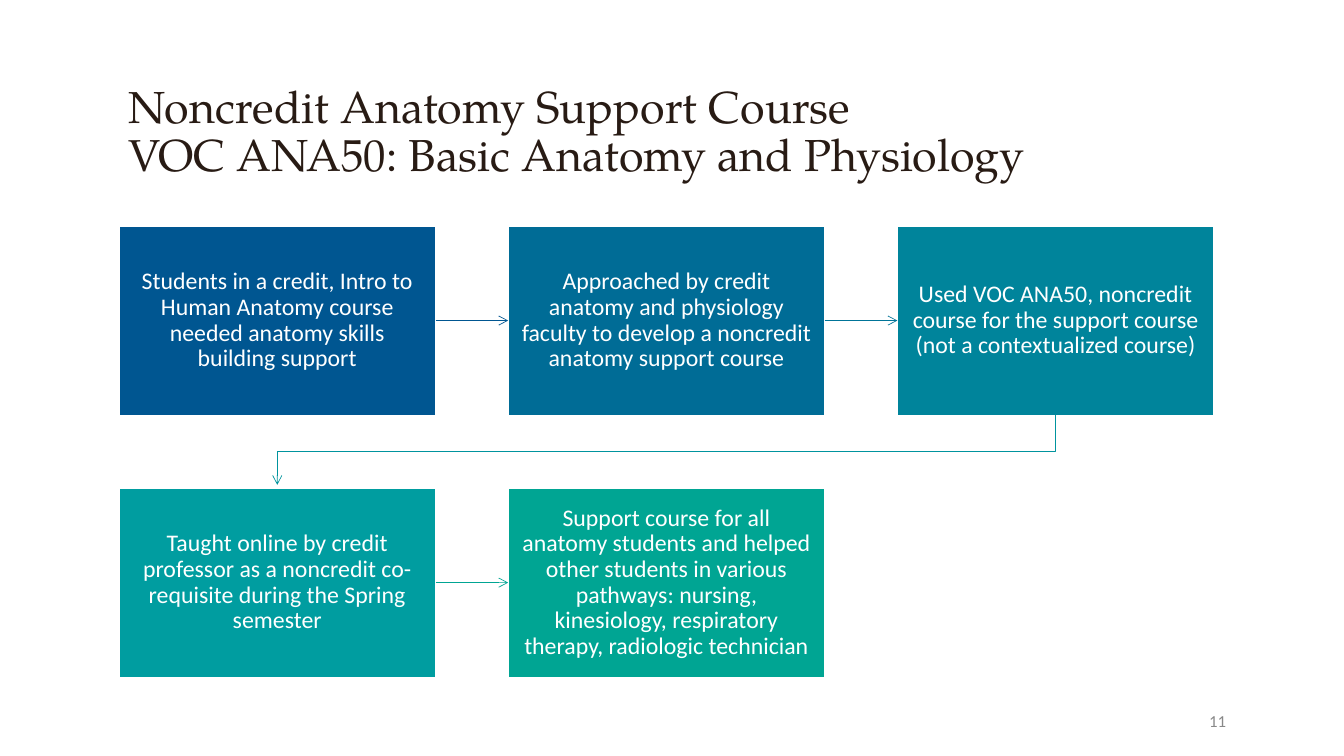
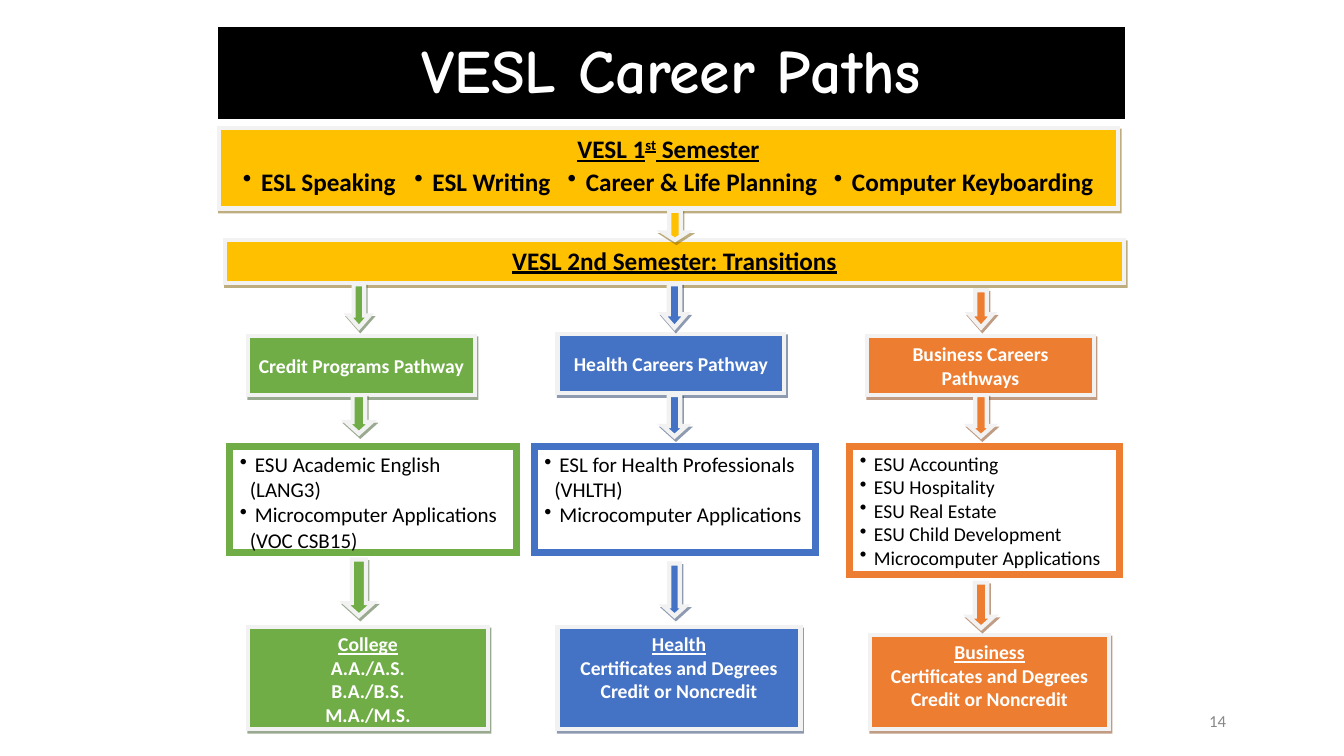
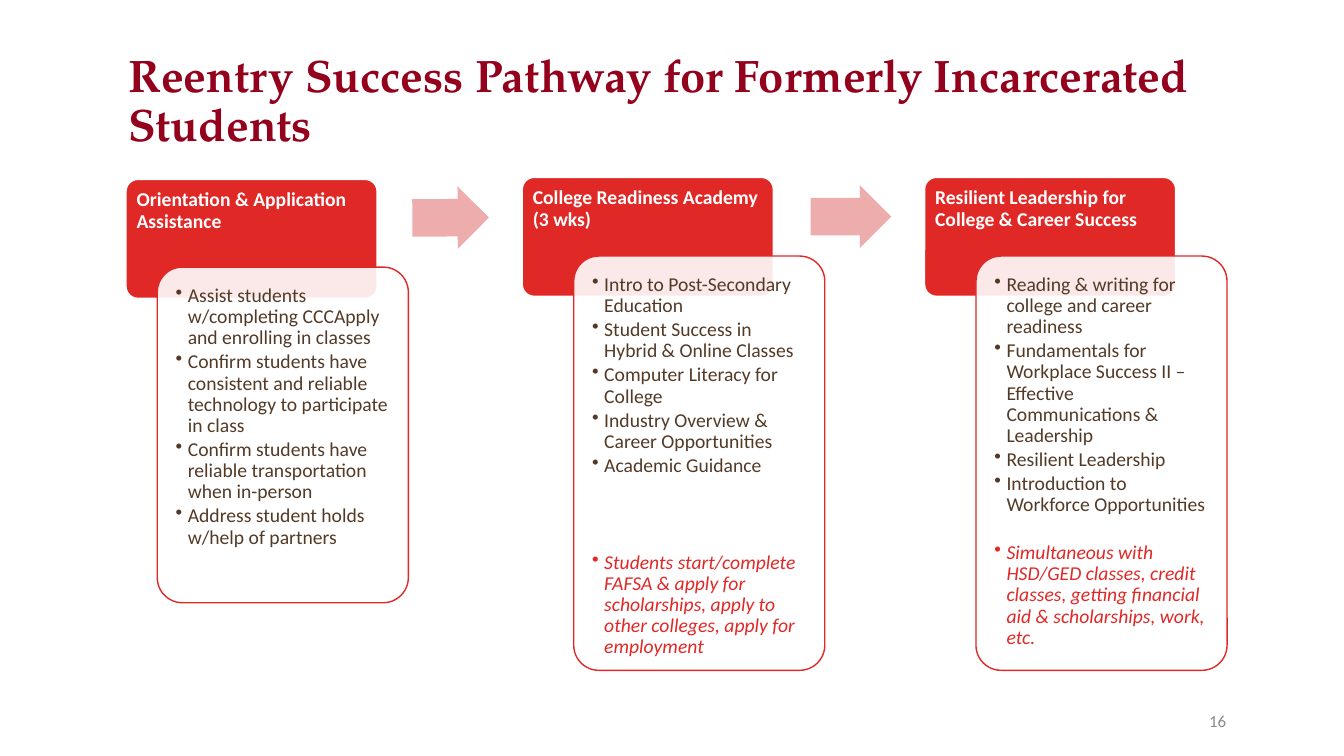
from dataclasses import dataclass
from typing import NamedTuple, Optional

from lxml import etree
from pptx import Presentation
from pptx.dml.color import RGBColor
from pptx.enum.shapes import MSO_CONNECTOR, MSO_SHAPE
from pptx.enum.text import MSO_ANCHOR, PP_ALIGN
from pptx.oxml.ns import qn
from pptx.util import Inches, Pt

RECTANGLE, ROUNDED = MSO_SHAPE.RECTANGLE, MSO_SHAPE.ROUNDED_RECTANGLE
DOWN_ARROW, RIGHT_ARROW = MSO_SHAPE.DOWN_ARROW, MSO_SHAPE.RIGHT_ARROW
STRAIGHT = MSO_CONNECTOR.STRAIGHT
LEFT, CENTER, RIGHT = PP_ALIGN.LEFT, PP_ALIGN.CENTER, PP_ALIGN.RIGHT
TOP, MIDDLE, BOTTOM = MSO_ANCHOR.TOP, MSO_ANCHOR.MIDDLE, MSO_ANCHOR.BOTTOM

SLIDE_WIDTH, SLIDE_HEIGHT = 13.33, 7.5
TEXT_INSETS, NO_INSETS = (0.1, 0.05, 0.1, 0.05), (0, 0, 0, 0)
BODY_FONT, TITLE_FONT, BANNER_FONT = "Calibri", "TeX Gyre Pagella", "Comic Neue"
COLORS = {
    "white": "FFFFFF", "black": "000000", "frame": "F2F2F2",
    "page number": "888888", "title": "281B14", "maroon": "93011D",
    "step 1": "005691", "step 2": "006C96", "step 3": "00849B",
    "step 4": "009DA0", "step 5": "00A593",
    "link 1": "005691", "link 2": "007498", "link 3": "00949E", "link 4": "00A593",
    "gold": "FFC000", "green": "70AD47", "blue": "4472C4", "orange": "ED7D31",
    "gold shadow": "7F5F00", "green shadow": "375623",
    "blue shadow": "1F3763", "orange shadow": "823B0B",
    "red": "E02826", "pink": "EDADAD", "brown": "533A27",
}


class Area(NamedTuple):
    left: float
    top: float
    width: float
    height: float


class Style(NamedTuple):
    size: float
    color: str
    font: str = BODY_FONT
    bold: bool = False
    italic: bool = False
    underline: bool = False
    superscript: bool = False


@dataclass(frozen=True)
class Line:
    """One paragraph: its runs and its layout."""
    runs: tuple
    align: PP_ALIGN = LEFT
    spacing: float = 1.0
    before: float = 0
    after: float = 0
    indent: float = 0
    bullet: bool = False


@dataclass(frozen=True)
class Lane:
    """One career pathway, from top to bottom."""
    color: str
    arrow_center: float
    arrows: tuple  # (top, width, height) of each
    pathway: str
    pathway_top: float
    courses: tuple  # a leading ">" marks a continuation
    courses_size: float
    courses_area: Area
    goal: str
    goal_lines: tuple
    goal_area: Area


@dataclass(frozen=True)
class Stage:
    """One stage of the reentry pathway."""
    heading: str
    header_left: float
    header_top: float
    body_area: Area
    points: tuple
    closing: Optional[str] = None
    closing_gap: float = 0


# ---------- Shared drawing ----------

def rgb(name: str) -> RGBColor:
    return RGBColor.from_string(COLORS[name])


def inches(area: Area) -> list:
    return [Inches(length) for length in area]


def add_child(parent, tag: str, **attributes):
    return etree.SubElement(parent, qn(tag), **attributes)


def plain(text: str, style: Style, **layout) -> Line:
    return Line(((text, style),), **layout)


def write(shape, lines, anchor=TOP, insets=TEXT_INSETS) -> None:
    frame = shape.text_frame
    frame.word_wrap = True
    frame.vertical_anchor = anchor
    (frame.margin_left, frame.margin_top,
     frame.margin_right, frame.margin_bottom) = [Inches(inset) for inset in insets]
    for index, line in enumerate(lines):
        paragraph = frame.add_paragraph() if index else frame.paragraphs[0]
        paragraph.alignment = line.align
        paragraph.line_spacing = line.spacing
        paragraph.space_before, paragraph.space_after = Pt(line.before), Pt(line.after)
        properties = paragraph._p.get_or_add_pPr()
        properties.set("marL", str(Inches(line.indent)))
        properties.set("indent", str(Inches(-line.indent if line.bullet else 0)))
        if line.bullet:
            add_child(properties, "a:buChar", char="•")
        for text, style in line.runs:
            add_run(paragraph, text, style)


def add_run(paragraph, text: str, style: Style) -> None:
    for index, part in enumerate(text.split("\n")):
        if index:
            paragraph.add_line_break()
        run = paragraph.add_run()
        run.text = part
        font = run.font
        font.size, font.name = Pt(style.size), style.font
        font.bold, font.italic, font.underline = style.bold, style.italic, style.underline
        font.color.rgb = rgb(style.color)
        if style.superscript:
            run._r.get_or_add_rPr().set("baseline", "30000")


def add_text(slide, area: Area, lines, anchor=TOP, insets=TEXT_INSETS) -> None:
    write(slide.shapes.add_textbox(*inches(area)), lines, anchor, insets)


def draw(slide, kind, area: Area, fill: str, line: Optional[str] = None,
         line_width: float = 1, adjustments=()):
    shape = slide.shapes.add_shape(kind, *inches(area))
    shape.shadow.inherit = False
    for index, value in enumerate(adjustments):
        shape.adjustments[index] = value
    shape.fill.solid()
    shape.fill.fore_color.rgb = rgb(fill)
    if line:
        shape.line.color.rgb = rgb(line)
        shape.line.width = Pt(line_width)
        add_child(shape._element.spPr.find(qn("a:ln")), "a:miter", lim="800000")
    else:
        shape.line.fill.background()
    return shape


def add_title(slide, text: str, height: float, style: Style) -> None:
    add_text(slide, Area(1.18, 0.4, 11, height), [plain(text, style, spacing=0.9)], BOTTOM)


def new_slide(presentation, number: int):
    slide = presentation.slides.add_slide(presentation.slide_layouts[6])
    style = Style(12, "page number")
    add_text(slide, Area(9.26, 6.95, 3, 0.4), [plain(str(number), style, align=RIGHT)], MIDDLE)
    return slide


# ---------- Slide 1: support course steps ----------

STEPS = (
    "Students in a credit, Intro to Human Anatomy course needed anatomy skills building support",
    "Approached by credit anatomy and physiology faculty to develop a noncredit "
    "anatomy support course",
    "Used VOC ANA50, noncredit course for the support course (not a contextualized course)",
    "Taught online by credit professor as a noncredit co-requisite during the Spring semester",
    "Support course for all anatomy students and helped other students in various pathways: "
    "nursing, kinesiology, respiratory therapy, radiologic technician",
)
STEP_COLUMNS = 3
STEP_LEFT, STEP_TOP, STEP_WIDTH, STEP_HEIGHT = 1.18, 2.24, 3.14, 1.88
STEP_PITCH_X, STEP_PITCH_Y = 3.86, 2.6


def style_link(link, color: str) -> None:
    link.line.color.rgb = rgb(color)
    link.line.width = Pt(0.5)
    add_child(link._element.spPr.find(qn("a:ln")), "a:tailEnd", type="arrow")


def link_straight(slide, start, end, color: str) -> None:
    link = slide.shapes.add_connector(STRAIGHT, 0, 0, 0, 0)
    link.begin_connect(start, 3)
    link.end_connect(end, 1)
    style_link(link, color)
    add_child(link._element.spPr, "a:effectLst")


def link_to_next_row(slide, start, end, color: str) -> None:
    start_x, end_x = start.left + start.width // 2, end.left + end.width // 2
    start_y, end_y = start.top + start.height, end.top - Inches(0.03)
    middle_y = (start_y + end.top) // 2
    builder = slide.shapes.build_freeform(start_x, start_y)
    builder.add_line_segments([(start_x, middle_y), (end_x, middle_y), (end_x, end_y)],
                              close=False)
    link = builder.convert_to_shape()
    link.shadow.inherit = False
    link.fill.background()
    style_link(link, color)


def build_support_course(presentation) -> None:
    slide = new_slide(presentation, 11)
    add_title(slide, "Noncredit Anatomy Support Course\nVOC ANA50: Basic Anatomy and Physiology",
              1.45, Style(32, "title", TITLE_FONT))
    boxes = []
    for index, text in enumerate(STEPS):
        row, column = divmod(index, STEP_COLUMNS)
        area = Area(STEP_LEFT + column * STEP_PITCH_X, STEP_TOP + row * STEP_PITCH_Y,
                    STEP_WIDTH, STEP_HEIGHT)
        box = draw(slide, RECTANGLE, area, f"step {index + 1}", "white")
        write(box, [plain(text, Style(17, "white"), align=CENTER, spacing=0.9)],
              MIDDLE, (0.13,) * 4)
        boxes.append(box)
    for number, (start, end) in enumerate(zip(boxes, boxes[1:]), 1):
        connect = link_to_next_row if number % STEP_COLUMNS == 0 else link_straight
        connect(slide, start, end, f"link {number}")


# ---------- Slide 2: career paths ----------

LANE_LEFT, LANE_PITCH = 2.46, 3.07
ARROW_HEADS = (0.57, 0.45, 0.45)
LANES = (
    Lane("green", 3.56, ((2.82, 0.21, 0.43), (3.92, 0.25, 0.38), (5.55, 0.28, 0.56)),
         "Credit Programs Pathway", 3.33,
         ("ESU Academic English", ">(LANG3)", "Microcomputer Applications", ">(VOC CSB15)"),
         15, Area(2.28, 4.43, 2.84, 1.05),
         "College", ("A.A./A.S.", "B.A./B.S.", "M.A./M.S."), Area(2.46, 6.22, 2.38, 1.01)),
    Lane("blue", 6.69, ((2.82, 0.23, 0.43), (3.92, 0.23, 0.41), (5.59, 0.21, 0.52)),
         "Health Careers Pathway", 3.31,
         ("ESL for Health Professionals", ">(VHLTH)", "Microcomputer Applications"),
         15, Area(5.3, 4.43, 2.79, 1.05),
         "Health", ("Certificates and Degrees", "Credit or Noncredit"),
         Area(5.53, 6.22, 2.41, 1.01)),
    Lane("orange", 9.73, ((2.88, 0.23, 0.37), (3.92, 0.23, 0.41), (5.78, 0.25, 0.45)),
         "Business Careers Pathways", 3.33,
         ("ESU Accounting", "ESU Hospitality", "ESU Real Estate", "ESU Child Development",
          "Microcomputer Applications"),
         14, Area(8.43, 4.43, 2.67, 1.27),
         "Business", ("Certificates and Degrees", "Credit or Noncredit"),
         Area(8.63, 6.3, 2.37, 0.93)),
)
# First-semester courses and the widths of their columns
FIRST_COURSES = (("ESL Speaking", 1.58), ("ESL Writing", 1.4),
                 ("Career & Life Planning", 2.52), ("Computer Keyboarding", 2.66))
FIRST_COURSE_LEFT, FIRST_COURSE_TOP, FIRST_COURSE_GAP = 2.41, 1.65, 0.12


def draw_raised(slide, kind, area: Area, color: str, adjustments=()):
    """A filled shape with a pale frame and a hard shadow."""
    shape = draw(slide, kind, area, color, "frame", 3, adjustments)
    effects = shape._element.spPr.find(qn("a:effectLst"))
    shadow = add_child(effects, "a:outerShdw", dist=str(Pt(2.2)), dir=str(63 * 60000),
                       algn="ctr", rotWithShape="0")
    shadow_color = add_child(shadow, "a:srgbClr", val=COLORS[f"{color} shadow"])
    add_child(shadow_color, "a:alpha", val="50000")
    return shape


def course_line(text: str, size: float) -> Line:
    style = Style(size, "black")
    if text.startswith(">"):
        return plain(text[1:], style, indent=0.1)
    return plain(text, style, indent=size / 100, bullet=True)


def draw_lane(slide, lane: Lane, column: int) -> None:
    label = Style(14, "white", bold=True)
    pathway_area = Area(LANE_LEFT + column * LANE_PITCH, lane.pathway_top, 2.25, 0.59)
    write(draw_raised(slide, RECTANGLE, pathway_area, lane.color),
          [plain(lane.pathway, label, align=CENTER)], MIDDLE)
    write(draw(slide, RECTANGLE, lane.courses_area, "white", lane.color, 5),
          [course_line(course, lane.courses_size) for course in lane.courses])
    goal_lines = [plain(lane.goal, label._replace(underline=True), align=CENTER)]
    goal_lines += [plain(text, label, align=CENTER) for text in lane.goal_lines]
    write(draw_raised(slide, RECTANGLE, lane.goal_area, lane.color), goal_lines)
    for (top, width, height), head in zip(lane.arrows, ARROW_HEADS):
        area = Area(lane.arrow_center - width / 2, top, width, height)
        draw_raised(slide, DOWN_ARROW, area, lane.color, (0.5, head))


def build_career_paths(presentation) -> None:
    slide = new_slide(presentation, 14)
    banner = draw(slide, RECTANGLE, Area(2.17, 0.27, 8.98, 0.91), "black", "black", 0.75)
    write(banner, [plain("VESL Career Paths", Style(44, "white", BANNER_FONT, bold=True),
                         align=CENTER)])
    # Semester bars
    item = Style(18, "black", bold=True)
    heading = item._replace(underline=True)
    first_title = (("VESL 1", heading), ("st", heading._replace(superscript=True)),
                   (" Semester", heading))
    write(draw_raised(slide, RECTANGLE, Area(2.17, 1.27, 8.92, 0.8), "gold"),
          [Line(first_title, align=CENTER)])
    left = FIRST_COURSE_LEFT
    for course, width in FIRST_COURSES:
        add_text(slide, Area(left, FIRST_COURSE_TOP, width, 0.31),
                 [plain(course, item, indent=0.18, bullet=True)], insets=NO_INSETS)
        left += width + FIRST_COURSE_GAP
    write(draw_raised(slide, RECTANGLE, Area(2.23, 2.38, 8.92, 0.43), "gold"),
          [plain("VESL 2nd Semester: Transitions", heading, align=CENTER)])
    draw_raised(slide, DOWN_ARROW, Area(6.58, 2.09, 0.23, 0.29), "gold", (0.5, 0.32))
    for column, lane in enumerate(LANES):
        draw_lane(slide, lane, column)


# ---------- Slide 3: reentry pathway ----------

STAGE_WIDTH, HEADER_HEIGHT = 2.49, 1.18
STAGES = (
    Stage("Orientation & Application Assistance", 1.25, 1.78,
          Area(1.56, 2.65, STAGE_WIDTH, 3.33),
          ("Assist students w/completing CCCApply and enrolling in classes",
           "Confirm students have consistent and reliable technology to participate in class",
           "Confirm students have reliable transportation when in-person",
           "Address student holds w/help of partners")),
    Stage("College Readiness Academy (3 wks)", 5.18, 1.76,
          Area(5.69, 2.54, STAGE_WIDTH, 4.11),
          ("Intro to Post-Secondary Education", "Student Success in Hybrid & Online Classes",
           "Computer Literacy for College", "Industry Overview & Career Opportunities",
           "Academic Guidance"),
          "Students start/complete FAFSA & apply for scholarships, apply to other colleges, "
          "apply for employment", 52),
    Stage("Resilient Leadership for College & Career Success", 9.17, 1.76,
          Area(9.68, 2.54, STAGE_WIDTH, 4.11),
          ("Reading & writing for college and career readiness",
           "Fundamentals for Workplace Success II – Effective Communications & Leadership",
           "Resilient Leadership", "Introduction to Workforce Opportunities"),
          "Simultaneous with HSD/GED classes, credit classes, getting financial aid & "
          "scholarships, work, etc.", 17),
)
STAGE_ARROWS = ((Area(4.09, 1.85, 0.76, 0.62), -0.3), (Area(8.04, 1.84, 0.8, 0.62), 0))


def draw_stage(slide, stage: Stage) -> None:
    header_area = Area(stage.header_left, stage.header_top, STAGE_WIDTH, HEADER_HEIGHT)
    header = draw(slide, ROUNDED, header_area, "red", "white", 1, (0.1,))
    write(header, [plain(stage.heading, Style(14, "white", bold=True), spacing=0.9)],
          insets=(0.07, 0.07, 0.07, 0.06))
    body = draw(slide, ROUNDED, stage.body_area, "white", "red", 1, (0.1,))
    fill_color = body._element.spPr.find(qn("a:solidFill"))[0]
    add_child(fill_color, "a:alpha", val="90000")
    layout = {"spacing": 0.9, "after": 2, "indent": 0.12, "bullet": True}
    lines = [plain(point, Style(14, "brown"), **layout) for point in stage.points]
    if stage.closing:
        lines.append(plain(stage.closing, Style(14, "red", italic=True),
                           before=stage.closing_gap, **layout))
    write(body, lines, insets=(0.11,) * 4)


def build_reentry_pathway(presentation) -> None:
    slide = new_slide(presentation, 16)
    add_title(slide, "Reentry Success Pathway for Formerly Incarcerated Students",
              1.15, Style(32.4, "maroon", TITLE_FONT, bold=True))
    for stage in STAGES:
        draw_stage(slide, stage)
    for area, rotation in STAGE_ARROWS:
        draw(slide, RIGHT_ARROW, area, "pink", adjustments=(0.6, 0.5)).rotation = rotation


def main() -> None:
    presentation = Presentation()
    presentation.slide_width = Inches(SLIDE_WIDTH)
    presentation.slide_height = Inches(SLIDE_HEIGHT)
    build_support_course(presentation)
    build_career_paths(presentation)
    build_reentry_pathway(presentation)
    presentation.save("out.pptx")


if __name__ == "__main__":
    main()
